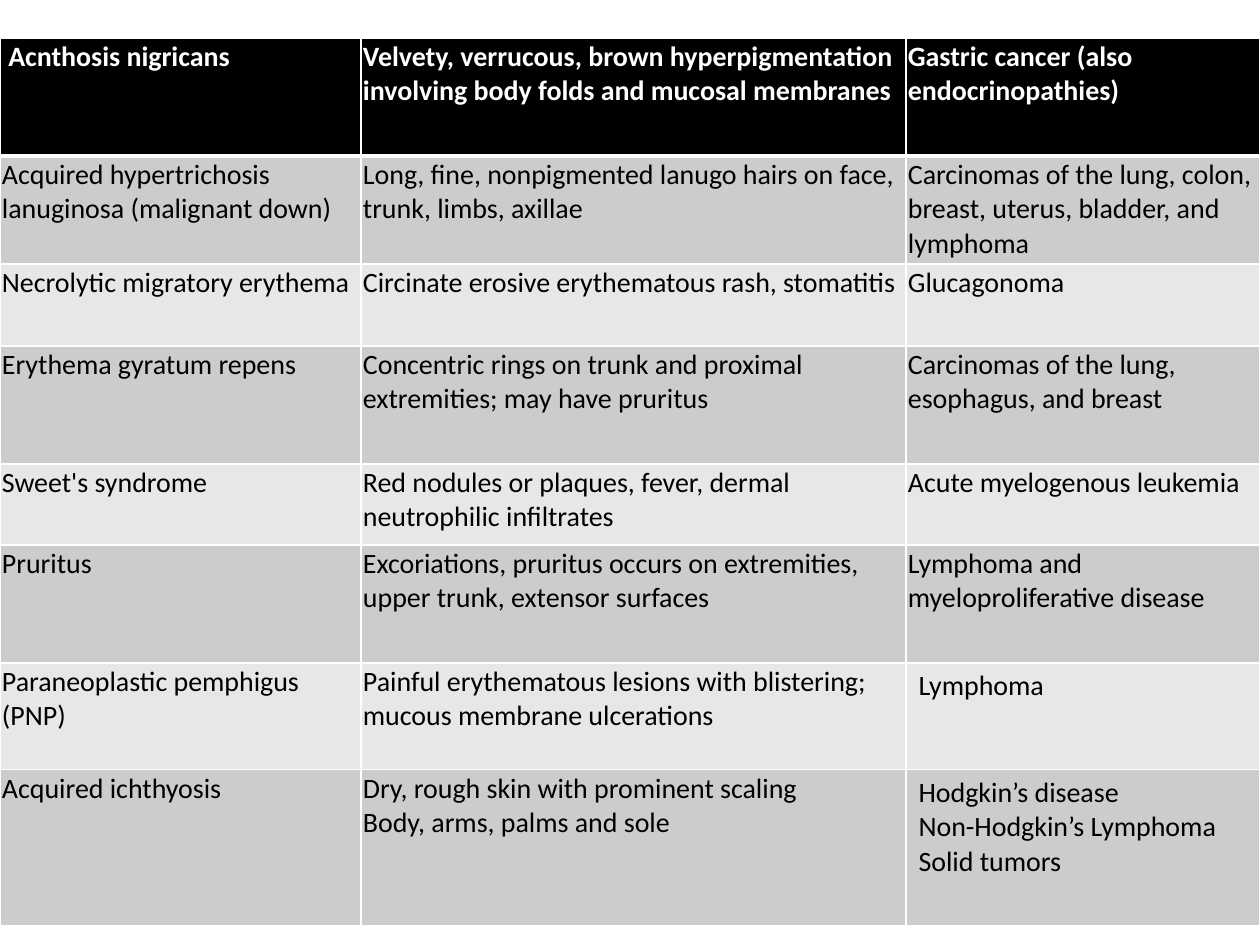
"""Build a slide with a table of skin signs and their associated cancers."""
import pptx
import pptx.dml.color
import pptx.oxml
import pptx.oxml.ns
import pptx.util

PX = 914400 // 126
COLUMNS = [361, 545, 354]
ROW_HEIGHTS = [118, 108, 82, 118, 81, 118, 107, 156]
TOP = 38
INSET = 2
WIDE_INSET_CELLS = {(6, 2), (7, 2)}
ROWS = [
    (" Acnthosis nigricans",
     "Velvety, verrucous, brown hyperpigmentation involving body folds and mucosal membranes",
     "Gastric cancer (also endocrinopathies)"),
    ("Acquired hypertrichosis\nlanuginosa (malignant down)",
     "Long, fine, nonpigmented lanugo hairs on face, trunk, limbs, axillae",
     "Carcinomas of the lung, colon, breast, uterus, bladder, and lymphoma"),
    ("Necrolytic migratory erythema",
     "Circinate erosive erythematous rash, stomatitis",
     "Glucagonoma"),
    ("Erythema gyratum repens",
     "Concentric rings on trunk and proximal extremities; may have pruritus",
     "Carcinomas of the lung, esophagus, and breast"),
    ("Sweet's syndrome",
     "Red nodules or plaques, fever, dermal neutrophilic infiltrates",
     "Acute myelogenous leukemia"),
    ("Pruritus",
     "Excoriations, pruritus occurs on extremities, upper trunk, extensor surfaces",
     "Lymphoma and myeloproliferative disease"),
    ("Paraneoplastic pemphigus (PNP)",
     "Painful erythematous lesions with blistering; mucous membrane ulcerations",
     "Lymphoma"),
    ("Acquired ichthyosis",
     "Dry, rough skin with prominent scaling\nBody, arms, palms and sole",
     "Hodgkin’s disease\nNon-Hodgkin’s Lymphoma Solid tumors"),
]


def px(n):
    return pptx.util.Emu(n * PX)


def rgb(value):
    return pptx.dml.color.RGBColor.from_string(value)


def set_borders(cell, row):
    widths = {"L": 1, "R": 1, "T": 3 if row == 1 else 1, "B": 3 if row == 0 else 1}
    for side, width in widths.items():
        cell._tc.get_or_add_tcPr().append(pptx.oxml.parse_xml(
            f'<a:ln{side} {pptx.oxml.ns.nsdecls("a")} w="{width * 12700}">'
            f'<a:solidFill><a:srgbClr val="FFFFFF"/></a:solidFill></a:ln{side}>'))


def fill_cell(cell, row, col, text):
    header = row == 0
    set_borders(cell, row)
    cell.fill.solid()
    cell.fill.fore_color.rgb = rgb("000000" if header else "CCCCCC" if row % 2 else "E7E7E7")
    if (row, col) not in WIDE_INSET_CELLS:
        cell.margin_left = cell.margin_right = px(INSET)
        cell.margin_top = cell.margin_bottom = px(INSET)
    tf = cell.text_frame
    for i, line in enumerate(text.split("\n")):
        p = tf.add_paragraph() if i else tf.paragraphs[0]
        r = p.add_run()
        r.text = line
        r.font.name = "Calibri"
        r.font.size = pptx.util.Pt(16)
        r.font.bold = header
        r.font.color.rgb = rgb("FFFFFF" if header else "000000")


def main():
    prs = pptx.Presentation()
    prs.slide_width, prs.slide_height = px(1260), px(945)
    s = prs.slides.add_slide(prs.slide_layouts[6])
    table = s.shapes.add_table(len(ROWS), len(COLUMNS), 0, px(TOP),
                               px(sum(COLUMNS)), px(sum(ROW_HEIGHTS))).table
    for column, width in zip(table.columns, COLUMNS):
        column.width = px(width)
    for row, (texts, height) in enumerate(zip(ROWS, ROW_HEIGHTS)):
        table.rows[row].height = px(height)
        for col, text in enumerate(texts):
            fill_cell(table.cell(row, col), row, col, text)
    prs.save("out.pptx")


if __name__ == "__main__":
    main()
